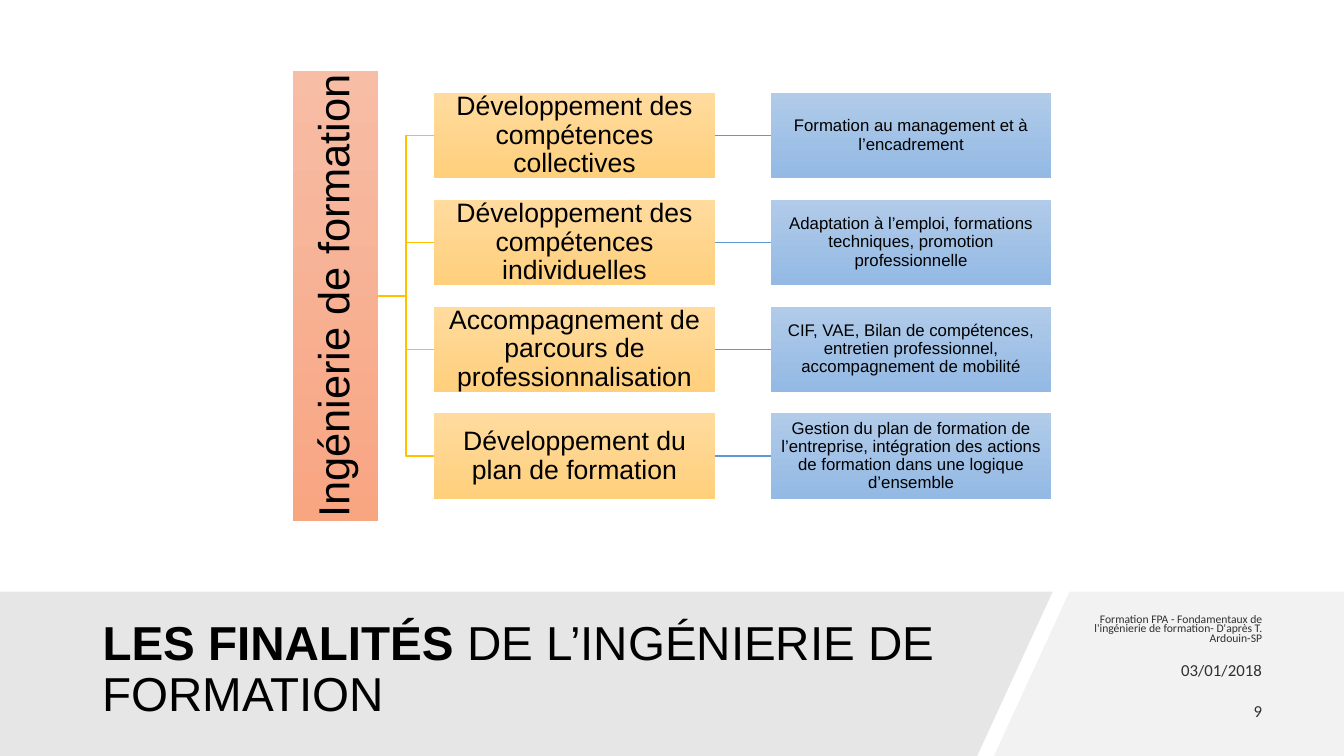
from lxml import etree
from pptx import Presentation
from pptx.dml.color import RGBColor
from pptx.enum.shapes import MSO_CONNECTOR, MSO_SHAPE
from pptx.enum.text import MSO_ANCHOR, PP_ALIGN
from pptx.oxml.ns import qn
from pptx.util import Pt

STRAIGHT = MSO_CONNECTOR.STRAIGHT
RECTANGLE = MSO_SHAPE.RECTANGLE
MIDDLE = MSO_ANCHOR.MIDDLE
LEFT, CENTER, RIGHT = PP_ALIGN.LEFT, PP_ALIGN.CENTER, PP_ALIGN.RIGHT


def color(value):
    return RGBColor.from_string(value)


def write(shape, runs, size, font="Arial", align=LEFT, spacing=0.9, margin=None):
    frame = shape.text_frame
    frame.word_wrap = True
    frame.vertical_anchor = MIDDLE
    if margin is not None:
        frame.margin_left = frame.margin_right = Pt(margin)
        frame.margin_top = frame.margin_bottom = Pt(margin)
    paragraph = frame.paragraphs[0]
    paragraph.alignment = align
    paragraph.line_spacing = spacing
    for text, bold in runs:
        run = paragraph.add_run()
        run.text = text
        run.font.name = font
        run.font.size = Pt(size)
        run.font.bold = bold
        run.font.color.rgb = color("000000")


presentation = Presentation()
presentation.slide_width = Pt(960)
presentation.slide_height = Pt(540)
slide = presentation.slides.add_slide(presentation.slide_layouts[6])
shapes = slide.shapes

bands = [
    ("F2F2F2", [(764, 422.6), (960, 422.6), (960, 540), (710, 540)]),
    ("E7E6E6", [(-1.4, 422.6), (752, 422.6), (698, 540), (-1.4, 540)]),
]
for fill, points in bands:
    corners = [(Pt(x), Pt(y)) for x, y in points]
    builder = shapes.build_freeform(*corners[0], scale=1.0)
    builder.add_line_segments(corners[1:], close=True)
    band = builder.convert_to_shape()
    band.shadow.inherit = False
    band.fill.solid()
    band.fill.fore_color.rgb = color(fill)
    band.line.fill.background()

title = shapes.add_textbox(Pt(66.2), Pt(435.6), Pt(635.8), Pt(86.4))
write(title, [("LES FINALITÉS ", True), ("DE L’INGÉNIERIE DE FORMATION", False)], 34)

goals = [
    ("Développement des compétences collectives",
     "Formation au management et à l’encadrement"),
    ("Développement des compétences individuelles",
     "Adaptation à l’emploi, formations techniques, promotion professionnelle"),
    ("Accompagnement de parcours de professionnalisation",
     "CIF, VAE, Bilan de compétences, entretien professionnel, accompagnement de mobilité"),
    ("Développement du plan de formation",
     "Gestion du plan de formation de l’entreprise, intégration des actions "
     "de formation dans une logique d’ensemble"),
]
BOX_WIDTH, BOX_HEIGHT, ROW_STEP = 200.4, 61, 76.3
GOAL_LEFT, ACTION_LEFT, FIRST_TOP = 310.2, 550.6, 66.4
ROOT_RIGHT, TRUNK, ROOT_LENGTH = 270, 290.1, 321.2
ROOT_MIDDLE = FIRST_TOP + (3 * ROW_STEP + BOX_HEIGHT) / 2

root_left = ROOT_RIGHT - (BOX_HEIGHT + ROOT_LENGTH) / 2
boxes = [("Ingénierie de formation", root_left, ROOT_MIDDLE - BOX_HEIGHT / 2,
          ROOT_LENGTH, 31, 1.4, "F7BDA5", "F8A582", 270)]

for row, (goal, action) in enumerate(goals):
    top = FIRST_TOP + row * ROW_STEP
    middle = top + BOX_HEIGHT / 2
    boxes.append((goal, GOAL_LEFT, top, BOX_WIDTH, 19, 0.7, "FFDB9E", "FFD07C", 0))
    boxes.append((action, ACTION_LEFT, top, BOX_WIDTH, 12, 0.7, "B1CBE9", "93B9E4", 0))

    builder = shapes.build_freeform(Pt(ROOT_RIGHT), Pt(ROOT_MIDDLE), scale=1.0)
    bends = [(TRUNK, ROOT_MIDDLE), (TRUNK, middle), (GOAL_LEFT, middle)]
    builder.add_line_segments([(Pt(x), Pt(y)) for x, y in bends], close=False)
    branch = builder.convert_to_shape()
    branch.shadow.inherit = False
    branch.fill.background()
    link = shapes.add_connector(STRAIGHT, Pt(GOAL_LEFT + BOX_WIDTH), Pt(middle),
                                Pt(ACTION_LEFT), Pt(middle))
    etree.SubElement(link.element.spPr, qn("a:effectLst"))
    for line, stroke in ((branch.line, "FFC000"), (link.line, "5B9BD5")):
        line.color.rgb = color(stroke)
        line.width = Pt(1)

for text, left, top, width, size, margin, light, dark, rotation in boxes:
    box = shapes.add_shape(RECTANGLE, Pt(left), Pt(top), Pt(width), Pt(BOX_HEIGHT))
    box.rotation = rotation
    box.shadow.inherit = False
    box.line.fill.background()
    box.fill.gradient()
    box.fill.gradient_angle = 180 if rotation else 270
    for stop, shade in zip(box.fill.gradient_stops, (light, dark)):
        stop.color.rgb = color(shade)
    write(box, [(text, False)], size, align=CENTER, margin=margin)

footers = [
    ("Formation FPA - Fondamentaux de l'ingénierie de formation- D'après T. Ardouin-SP",
     759.6, 435.6, 149, 8.3, 0.7),
    ("03/01/2018", 759.6, 464.4, 149, 12, 1.0),
    ("9", 802.8, 493.2, 105.8, 12, 1.0),
]
for text, left, top, width, size, spacing in footers:
    footer = shapes.add_textbox(Pt(left), Pt(top), Pt(width), Pt(28.8))
    write(footer, [(text, False)], size, "Calibri", RIGHT, spacing)
    footer.text_frame.paragraphs[0].space_after = Pt(6)
    for ink in footer.element.iter(qn("a:srgbClr")):
        etree.SubElement(ink, qn("a:alpha"), val="80000")

presentation.save("out.pptx")
